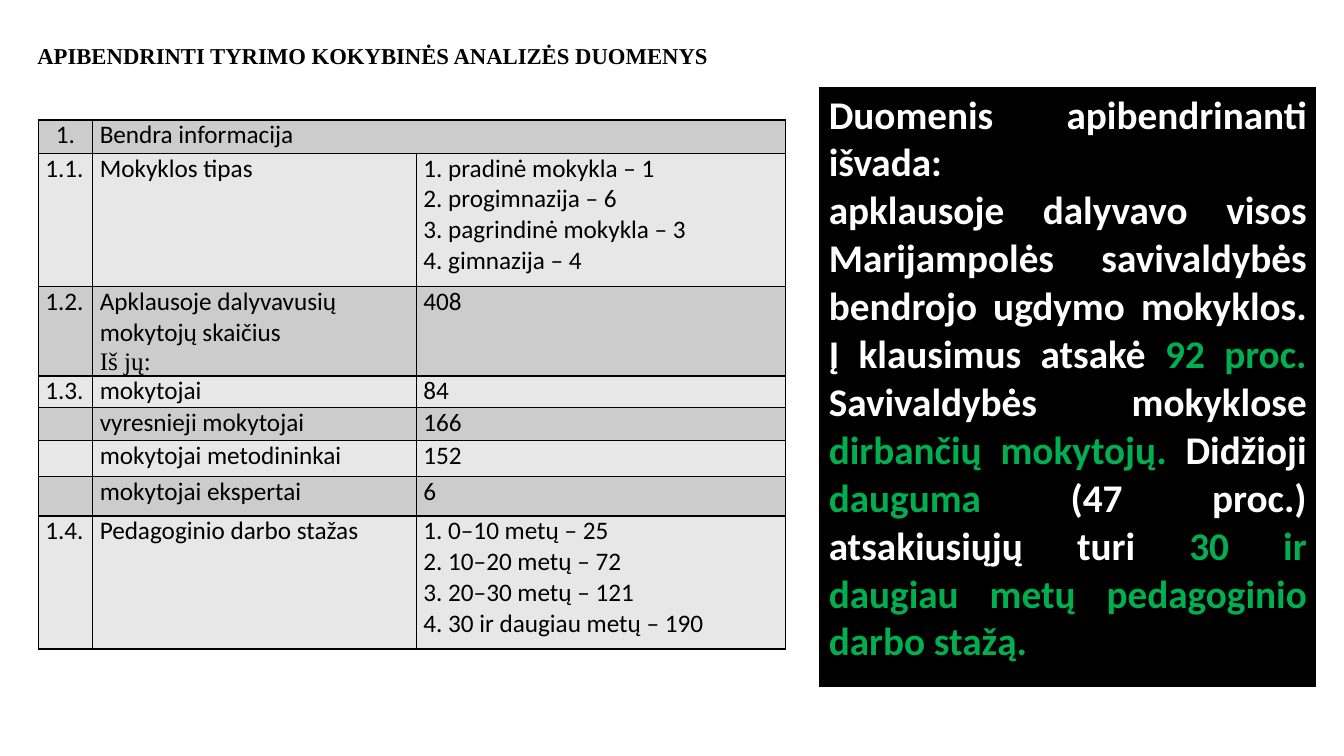
"""Build the slide with the survey data table and its summary."""
from lxml.etree import SubElement as Sub
from pptx import Presentation
from pptx.dml.color import RGBColor
from pptx.enum.text import MSO_ANCHOR as Anchor, MSO_AUTO_SIZE as Fit, PP_ALIGN as Align
from pptx.oxml.ns import qn
from pptx.util import Inches, Pt

BLACK = RGBColor(0x00, 0x00, 0x00)
WHITE = RGBColor(0xFF, 0xFF, 0xFF)
GREEN = RGBColor(0x00, 0xB0, 0x50)
DARK = RGBColor(0xCC, 0xCC, 0xCC)
LIGHT = RGBColor(0xE7, 0xE7, 0xE7)
SERIF, SANS = "Times New Roman", "Calibri"


def style(run, face, size, color, bold=False):
    for key, val in {"name": face, "size": Pt(size), "bold": bold}.items():
        setattr(run.font, key, val)
    run.font.color.rgb = color


def paint(cell, fill, edge, widths):
    props = cell._tc.get_or_add_tcPr()
    for side, width in zip("LRTB", widths):
        line = Sub(props, qn(f"a:ln{side}"), w=str(Pt(width)))
        Sub(Sub(line, qn("a:solidFill")), qn("a:srgbClr"), val=str(edge))
    cell.fill.solid()
    cell.fill.fore_color.rgb = fill


deck = Presentation()
deck.slide_width, deck.slide_height = Inches(13.33), Inches(7.5)
slide = deck.slides.add_slide(deck.slide_layouts[5])

title = slide.shapes.title
spot = {"left": 0.27, "top": 0.44, "width": 6.95, "height": 0.92}
for key, val in spot.items():
    setattr(title, key, Inches(val))
frame = title.text_frame
look = {"auto_size": Fit.NONE, "vertical_anchor": Anchor.TOP,
        "margin_top": Inches(0.01), "word_wrap": True}
for key, val in look.items():
    setattr(frame, key, val)
head = frame.paragraphs[0]
head.alignment, head.line_spacing = Align.LEFT, 0.9
run = head.add_run()
run.text = "APIBENDRINTI TYRIMO KOKYBINĖS ANALIZĖS DUOMENYS"
style(run, SERIF, 16.2, BLACK, True)

rows = [
    (0.33, "1.", "Bendra informacija", ""),
    (1.32, "1.1.", "Mokyklos tipas",
     "1. pradinė mokykla – 1\n2. progimnazija – 6\n3. pagrindinė mokykla – 3\n4. gimnazija – 4"),
    (0.89, "1.2.", "Apklausoje dalyvavusių mokytojų skaičius\nIš jų:", "408"),
    (0.31, "1.3.", "mokytojai", "84"),
    (0.33, "", "vyresnieji mokytojai", "166"),
    (0.36, "", "mokytojai metodininkai", "152"),
    (0.39, "", "mokytojai ekspertai", "6"),
    (1.32, "1.4.", "Pedagoginio darbo stažas",
     "1. 0–10 metų – 25\n2. 10–20 metų – 72\n3. 20–30 metų – 121\n4. 30 ir daugiau metų – 190"),
]
pads = {"margin_left": 0.07, "margin_right": 0.07, "margin_top": 0, "margin_bottom": 0}
grid = slide.shapes.add_table(len(rows), 3, Inches(0.38), Inches(1.19),
                              Inches(7.41), Inches(5.25)).table
for col, width in zip(grid.columns, (0.54, 3.21, 3.66)):
    col.width = Inches(width)
for i, (high, *texts) in enumerate(rows):
    grid.rows[i].height = Inches(high)
    for j, text in enumerate(texts):
        cell = grid.cell(i, j)
        paint(cell, LIGHT if i % 2 else DARK, BLACK, (1, 1, 1, 1))
        for key, val in pads.items():
            setattr(cell, key, Inches(val))
        cell.text = text
        for para in cell.text_frame.paragraphs:
            for run in para.runs:
                style(run, SERIF if run.text == "Iš jų:" else SANS, 18, BLACK)
grid.cell(0, 0).text_frame.paragraphs[0].alignment = Align.CENTER
grid.cell(0, 1).merge(grid.cell(0, 2))

notes = [
    [("Duomenis apibendrinanti išvada: ", WHITE)],
    [("apklausoje dalyvavo visos Marijampolės savivaldybės bendrojo ugdymo "
      "mokyklos. Į klausimus atsakė ", WHITE),
     ("92 proc.", GREEN),
     (" Savivaldybės mokyklose ", WHITE),
     ("dirbančių mokytojų.", GREEN),
     (" Didžioji ", WHITE),
     ("dauguma", GREEN),
     (" (47 proc.) atsakiusiųjų turi ", WHITE),
     ("30 ir daugiau metų pedagoginio darbo stažą.", GREEN)],
]
panel = slide.shapes.add_table(1, 1, Inches(8.12), Inches(0.86),
                               Inches(4.94), Inches(5.97)).table
cell = panel.cell(0, 0)
paint(cell, BLACK, WHITE, (1, 1, 1, 3))
frame = cell.text_frame
for i, parts in enumerate(notes):
    para = frame.add_paragraph() if i else frame.paragraphs[0]
    para.alignment = Align.JUSTIFY
    for text, color in parts:
        run = para.add_run()
        run.text = text
        style(run, SANS, 28, color, True)

deck.save("out.pptx")
